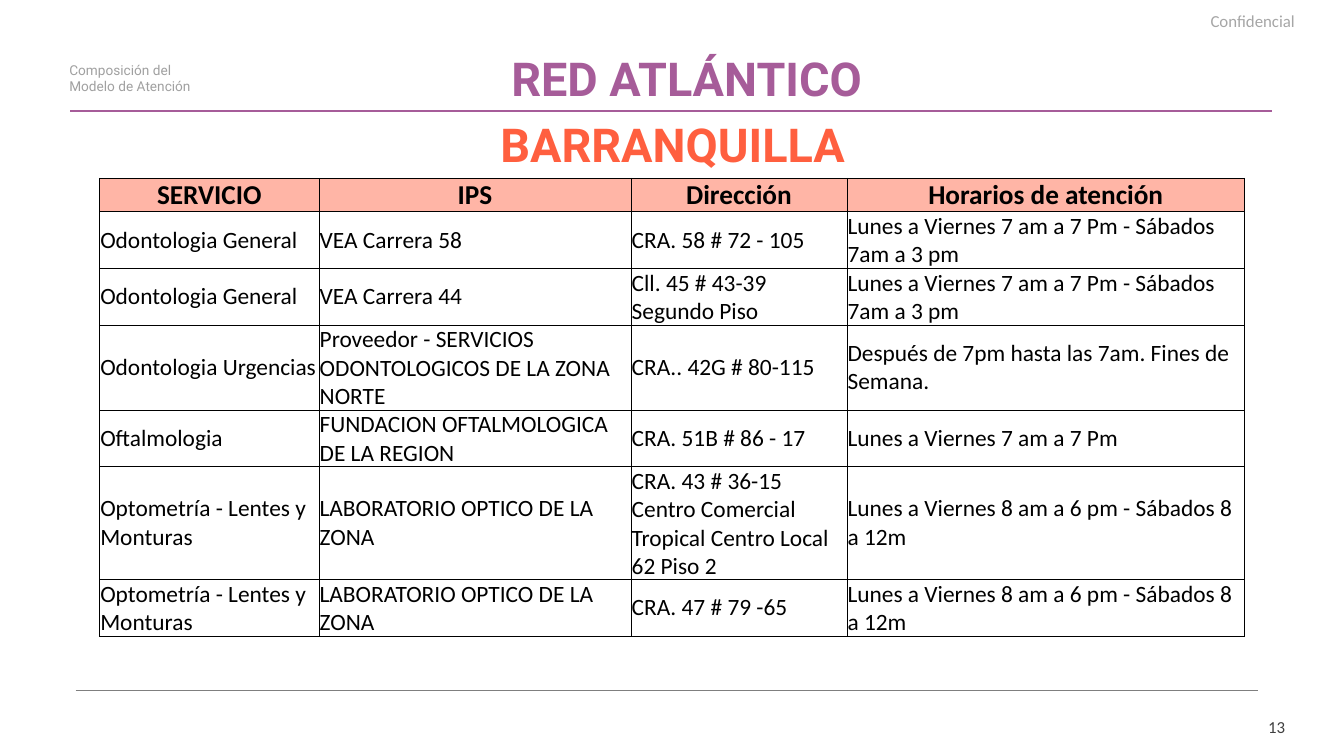
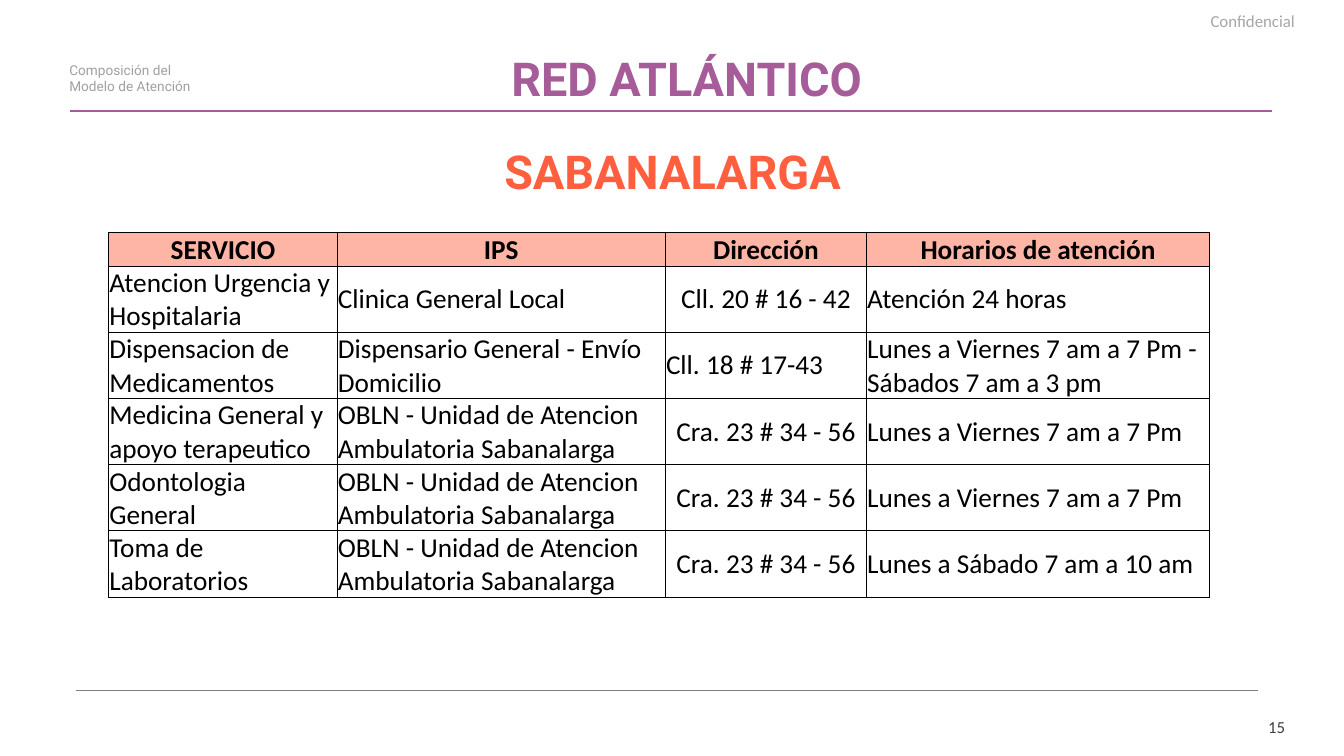
from lxml.etree import SubElement
from pptx import Presentation
from pptx.dml.color import RGBColor
from pptx.enum.shapes import MSO_CONNECTOR
from pptx.enum.text import MSO_ANCHOR, PP_ALIGN
from pptx.oxml.ns import qn
from pptx.util import Inches, Pt

PURPLE = RGBColor(0xA6, 0x5C, 0x99)
CORAL = RGBColor(0xFF, 0x5F, 0x3F)
PEACH = RGBColor(0xFF, 0xB5, 0xA6)
BLACK = RGBColor(0x00, 0x00, 0x00)
DARK_GRAY = RGBColor(0x40, 0x40, 0x40)
RULE_GRAY = RGBColor(0x7F, 0x7F, 0x7F)
LABEL_GRAY = RGBColor(0xA0, 0xA0, 0xA0)
LIGHT_GRAY = RGBColor(0xA6, 0xA6, 0xA6)

HEADINGS = ("SERVICIO", "IPS", "Dirección", "Horarios de atención")
HEADING_HEIGHT = 0.47
WEEKDAYS = "Lunes a Viernes 7 am a 7 Pm"
DENTAL_HOURS = WEEKDAYS + " - Sábados 7am a 3 pm"
OPTICAL_HOURS = "Lunes a Viernes 8 am a 6 pm - Sábados 8 a 12m"
OPTOMETRY = "Optometría - Lentes y Monturas"
OPTICAL_LAB = "LABORATORIO OPTICO DE LA ZONA"
OUTPATIENT_UNIT = "OBLN - Unidad de Atencion Ambulatoria Sabanalarga"
UNIT_ADDRESS = "Cra. 23 # 34 - 56"

BARRANQUILLA = (
    ("Odontologia General", "VEA Carrera 58", "CRA. 58 # 72 - 105", DENTAL_HOURS),
    ("Odontologia General", "VEA Carrera 44", "Cll. 45 # 43-39 Segundo Piso", DENTAL_HOURS),
    ("Odontologia Urgencias", "Proveedor - SERVICIOS ODONTOLOGICOS DE LA ZONA NORTE",
     "CRA.. 42G # 80-115", "Después de 7pm hasta las 7am. Fines de Semana."),
    ("Oftalmologia", "FUNDACION OFTALMOLOGICA DE LA REGION", "CRA. 51B # 86 - 17", WEEKDAYS),
    (OPTOMETRY, OPTICAL_LAB,
     "CRA. 43 # 36-15 Centro Comercial Tropical Centro Local 62 Piso 2", OPTICAL_HOURS),
    (OPTOMETRY, OPTICAL_LAB, "CRA. 47 # 79 -65", OPTICAL_HOURS),
)
SABANALARGA = (
    ("Atencion Urgencia y Hospitalaria", "Clinica General Local", "Cll. 20 # 16 - 42",
     "Atención 24 horas"),
    ("Dispensacion de Medicamentos", "Dispensario General - Envío Domicilio",
     "Cll. 18 # 17-43", WEEKDAYS + " - Sábados 7 am a 3 pm"),
    ("Medicina General y apoyo terapeutico", OUTPATIENT_UNIT, UNIT_ADDRESS, WEEKDAYS),
    ("Odontologia General", OUTPATIENT_UNIT, UNIT_ADDRESS, WEEKDAYS),
    ("Toma de Laboratorios", OUTPATIENT_UNIT, UNIT_ADDRESS, "Lunes a Sábado 7 am a 10 am"),
)


def write(frame, text, *, size, color=BLACK, font="Calibri", bold=False,
          align=PP_ALIGN.LEFT, spacing=None):
    """Fill a text frame with one formatted paragraph."""
    para = frame.paragraphs[0]
    para.alignment = align
    para.line_spacing = spacing
    span = para.add_run()
    span.text = text
    span.font.name = font
    span.font.size = Pt(size)
    span.font.bold = bold
    span.font.color.rgb = color


def border_cell(cell):
    """Draw a thin black line on all four sides; call before setting the fill."""
    properties = cell._tc.get_or_add_tcPr()
    for side in ("lnL", "lnR", "lnT", "lnB"):
        line = SubElement(properties, qn(f"a:{side}"), w=str(Pt(0.5)))
        SubElement(SubElement(line, qn("a:solidFill")), qn("a:srgbClr"), val=str(BLACK))


class NetworkDeck:
    def __init__(self):
        self.deck = Presentation()
        self.deck.slide_width = Inches(19.17)
        self.deck.slide_height = Inches(10.79)
        self.page = None

    def add_page(self, number):
        """Start a slide with the title, rules and small labels all slides share."""
        self.page = self.deck.slides.add_slide(self.deck.slide_layouts[5])
        self.rule(1.08, 17.95, 9.86, RULE_GRAY, 1)
        self.rule(1, 18.15, 1.58, PURPLE, 2.25)
        self.label(number, 17.86, 10.23, 0.47, 0.29, inset=0, anchor=MSO_ANCHOR.BOTTOM,
                   size=17.3, color=DARK_GRAY, align=PP_ALIGN.RIGHT)
        self.label("Confidencial", 13.78, 0.06, 4.75, 0.42, inset=0.06,
                   size=17.3, color=LIGHT_GRAY, align=PP_ALIGN.RIGHT, spacing=1.1)
        self.label("Composición del Modelo de Atención", 0.89, 0.83, 2.3, 0.57,
                   size=14, color=LABEL_GRAY, font="Roboto")
        self.title("RED ATLÁNTICO")

    def title(self, text):
        box = self.page.shapes.title
        box.left, box.top = Inches(2.98), Inches(0.66)
        box.width, box.height = Inches(13.63), Inches(0.91)
        box.text_frame.vertical_anchor = MSO_ANCHOR.TOP
        write(box.text_frame, text, size=48, color=PURPLE, font="Roboto", bold=True,
              align=PP_ALIGN.CENTER)

    def city(self, text, top):
        self.label(text, 1.06, top, 17.07, 0.91, size=48, color=CORAL, font="Roboto",
                   bold=True, align=PP_ALIGN.CENTER)

    def label(self, text, left, top, width, height, inset=None,
              anchor=MSO_ANCHOR.TOP, **style):
        box = self.page.shapes.add_textbox(Inches(left), Inches(top),
                                           Inches(width), Inches(height))
        frame = box.text_frame
        frame.word_wrap = True
        frame.vertical_anchor = anchor
        if inset is not None:
            frame.margin_left = frame.margin_right = Inches(inset)
            frame.margin_top = frame.margin_bottom = Inches(inset)
        write(frame, text, **style)

    def rule(self, left, right, top, color, weight):
        line = self.page.shapes.add_connector(
            MSO_CONNECTOR.STRAIGHT, Inches(left), Inches(top), Inches(right), Inches(top))
        line.line.color.rgb = color
        line.line.width = Pt(weight)
        SubElement(line._element.spPr, qn("a:effectLst"))

    def schedule(self, rows, left, top, widths, heights, size, centered=()):
        """Add a table of services; centered holds (row, column) of centred body cells."""
        heights = (HEADING_HEIGHT, *heights)
        table = self.page.shapes.add_table(
            len(heights), len(widths), Inches(left), Inches(top),
            Inches(sum(widths)), Inches(sum(heights))).table
        table.horz_banding = False
        for column, width in zip(table.columns, widths):
            column.width = Inches(width)
        for row, height in zip(table.rows, heights):
            row.height = Inches(height)
        for row_index, texts in enumerate((HEADINGS, *rows)):
            heading = row_index == 0
            for column_index, text in enumerate(texts):
                cell = table.cell(row_index, column_index)
                cell.margin_left = cell.margin_right = cell.margin_top = Inches(0.01)
                cell.margin_bottom = 0
                cell.vertical_anchor = MSO_ANCHOR.MIDDLE
                border_cell(cell)
                if heading:
                    cell.fill.solid()
                    cell.fill.fore_color.rgb = PEACH
                else:
                    cell.fill.background()
                middle = heading or (row_index, column_index) in centered
                write(cell.text_frame, text, size=28 if heading else size, bold=heading,
                      align=PP_ALIGN.CENTER if middle else PP_ALIGN.LEFT)


def main():
    network = NetworkDeck()

    # Barranquilla
    network.add_page("13")
    network.city("BARRANQUILLA", 1.6)
    network.schedule(BARRANQUILLA, 1.42, 2.54, (3.13, 4.45, 3.08, 5.67),
                     (0.81, 0.81, 1.21, 0.81, 1.6, 0.81), size=24)

    # Sabanalarga
    network.add_page("15")
    network.city("SABANALARGA", 1.99)
    network.schedule(SABANALARGA, 1.55, 3.32, (3.26, 4.68, 2.87, 4.89),
                     (0.94,) * len(SABANALARGA), size=28,
                     centered={(row, 2) for row in (1, 3, 4, 5)})

    network.deck.save("out.pptx")


if __name__ == "__main__":
    main()
